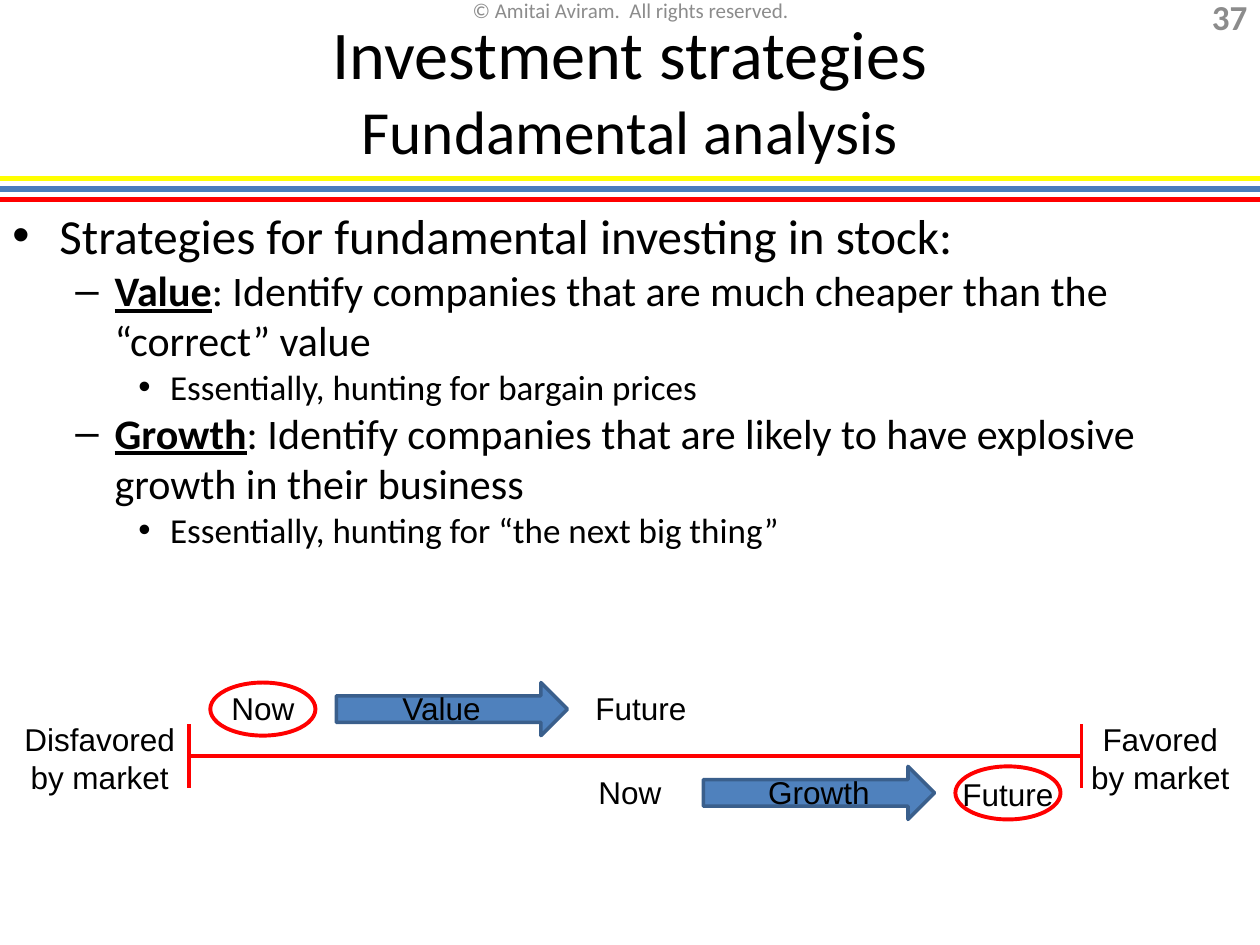
from dataclasses import dataclass
from lxml import etree
from pptx import Presentation
from pptx.dml.color import RGBColor
from pptx.enum.shapes import MSO_CONNECTOR, MSO_SHAPE
from pptx.enum.text import MSO_ANCHOR, MSO_AUTO_SIZE, PP_ALIGN
from pptx.oxml.ns import qn
from pptx.util import Cm, Pt

LEFT, CENTER, RIGHT = PP_ALIGN.LEFT, PP_ALIGN.CENTER, PP_ALIGN.RIGHT
TOP, MIDDLE = MSO_ANCHOR.TOP, MSO_ANCHOR.MIDDLE
STRAIGHT = MSO_CONNECTOR.STRAIGHT
ARROW, OVAL = MSO_SHAPE.RIGHT_ARROW, MSO_SHAPE.OVAL


@dataclass(frozen=True)
class Theme:
    text: str = "000000"
    muted: str = "8C8C8C"
    red: str = "FF0000"
    yellow: str = "FFFF00"
    band_blue: str = "4B7EBC"
    arrow_fill: str = "4F81BD"
    arrow_line: str = "3A5F8C"
    heading_font: str = "Calibri"
    label_font: str = "Arial"
    title: int = 39
    subtitle: int = 35
    levels: tuple = (28, 24, 20)
    label: int = 18
    notice: int = 12
    number: int = 20


THEME = Theme()
# Bullet sign, text indent and hanging indent in cm for each level
BULLETS = (("•", 0.95, 0.95), ("–", 2.06, 0.79), ("•", 3.18, 0.64))
OUTLINE = (
    (0, "", "Strategies for fundamental investing in stock:"),
    (1, "Value", ": Identify companies that are much cheaper than the “correct” value"),
    (2, "", "Essentially, hunting for bargain prices"),
    (1, "Growth", ": Identify companies that are likely to have explosive growth in their business"),
    (2, "", "Essentially, hunting for “the next big thing”"),
)


def color(value):
    return RGBColor.from_string(value)


def add_span(para, text, size, font=THEME.heading_font, fill=THEME.text, **formats):
    span = para.add_run()
    span.text = text
    span.font.color.rgb = color(fill)
    for name, value in {"size": Pt(size), "name": font, **formats}.items():
        setattr(span.font, name, value)


def set_frame(frame, anchor=TOP):
    formats = {"word_wrap": True, "auto_size": MSO_AUTO_SIZE.NONE, "vertical_anchor": anchor}
    for name, value in formats.items():
        setattr(frame, name, value)


def add_text(page, box, text, size, align=CENTER, anchor=TOP, **formats):
    frame = page.shapes.add_textbox(*map(Cm, box)).text_frame
    set_frame(frame, anchor)
    para = frame.paragraphs[0]
    para.alignment = align
    for index, line in enumerate(text.split("\n")):
        if index:
            para.add_line_break()
        add_span(para, line, size, **formats)


def add_label(page, box, text):
    add_text(page, box, text, THEME.label, font=THEME.label_font)


def add_line(page, start, end, fill, width):
    line = page.shapes.add_connector(STRAIGHT, *map(Cm, (*start, *end)))
    line.line.color.rgb = color(fill)
    line.line.width = Pt(width)
    etree.SubElement(line._element.spPr, qn("a:effectLst"))


def add_figure(page, kind, box, line, width, fill=None):
    figure = page.shapes.add_shape(kind, *map(Cm, box))
    figure.shadow.inherit = False
    figure.line.color.rgb = color(line)
    figure.line.width = Pt(width)
    if fill:
        figure.fill.solid()
        figure.fill.fore_color.rgb = color(fill)
    else:
        figure.fill.background()


def add_header(page, box):
    left, top, width, height = box
    # Three coloured bands under the title
    for index, fill in enumerate((THEME.yellow, THEME.band_blue, THEME.red)):
        y = top + height + 0.21 * index
        add_line(page, (left, y), (left + width, y), fill, 3)
    # Notice and page number
    add_text(page, (left + 8.69, top, 8.05, 0.43), "© Amitai Aviram.  All rights reserved.",
             THEME.notice, anchor=MIDDLE, fill=THEME.muted)
    add_text(page, (left + width - 1.7, top + 0.03, 1.7, 0.61), "37", THEME.number,
             RIGHT, MIDDLE, fill=THEME.muted, bold=True)
    # Two-line title
    title = page.shapes.title
    for name, value in zip(("left", "top", "width", "height"), box):
        setattr(title, name, Cm(value))
    set_frame(title.text_frame, MIDDLE)
    para = title.text_frame.paragraphs[0]
    para.alignment = CENTER
    add_span(para, "Investment strategies", THEME.title)
    para.add_line_break()
    add_span(para, "Fundamental analysis", THEME.subtitle)


def set_bullet(para, level):
    sign, indent, hanging = BULLETS[level]
    props = para._p.get_or_add_pPr()
    props.set("marL", str(Cm(indent)))
    props.set("indent", str(-Cm(hanging)))
    etree.SubElement(props, qn("a:buFont")).set("typeface", THEME.label_font)
    etree.SubElement(props, qn("a:buChar")).set("char", sign)


def add_outline(page, box):
    frame = page.shapes.add_textbox(*map(Cm, box)).text_frame
    set_frame(frame)
    for index, (level, term, text) in enumerate(OUTLINE):
        para = frame.add_paragraph() if index else frame.paragraphs[0]
        para.level = level
        para.alignment = LEFT
        set_bullet(para, level)
        size = THEME.levels[level]
        if term:
            add_span(para, term, size, bold=True, underline=True)
        add_span(para, text, size)


def add_strategy(page, box, name, name_offset, circle_future, drop=0):
    left, top, width, height = box
    future_left = left + 7.41
    add_label(page, (left, top, 2.12, 1.02), "Now")
    add_label(page, (future_left, top + drop, 2.54, 1.02), "Future")
    add_figure(page, ARROW, (left + 2.54, top, 4.66, height),
               THEME.arrow_line, 2, THEME.arrow_fill)
    add_label(page, (left + 2.54 + name_offset, top, 2.96, 1.02), name)
    # Ring centred on the moment that the strategy looks at
    ring_left = future_left + 0.21 if circle_future else left
    add_figure(page, OVAL, (ring_left, top, 2.12, height), THEME.red, 2.25)


def add_market_scale(page, box):
    left, top, width, height = box
    right, middle = left + width, top + height / 2
    # Axis with end ticks
    add_line(page, (left, middle), (right, middle), THEME.red, 2.5)
    for x in (left, right):
        add_line(page, (x, top), (x, top + height), THEME.red, 2)
    # End labels
    add_label(page, (left - 3.81, top - 0.21, 4.02, 1.8), "Disfavored by market")
    add_label(page, (right - 0.42, top - 0.21, 4.02, 1.8), "Favored\nby market")
    # One strategy above the axis and one below it
    add_strategy(page, (left + 0.43, middle - 1.48, 9.95, 1.07), "Value", 0.64, False)
    add_strategy(page, (left + 7.83, middle + 0.21, 9.95, 1.07), "Growth", 0.85, True, 0.04)


def main():
    deck = Presentation()
    deck.slide_width, deck.slide_height = Cm(25.4), Cm(19.05)
    page = deck.slides.add_slide(deck.slide_layouts.get_by_name("Title Only"))
    add_header(page, (0, 0, 25.4, 3.6))
    add_outline(page, (0, 4.02, 25.4, 15.03))
    add_market_scale(page, (3.81, 14.6, 17.99, 1.28))
    deck.save("out.pptx")


if __name__ == "__main__":
    main()
